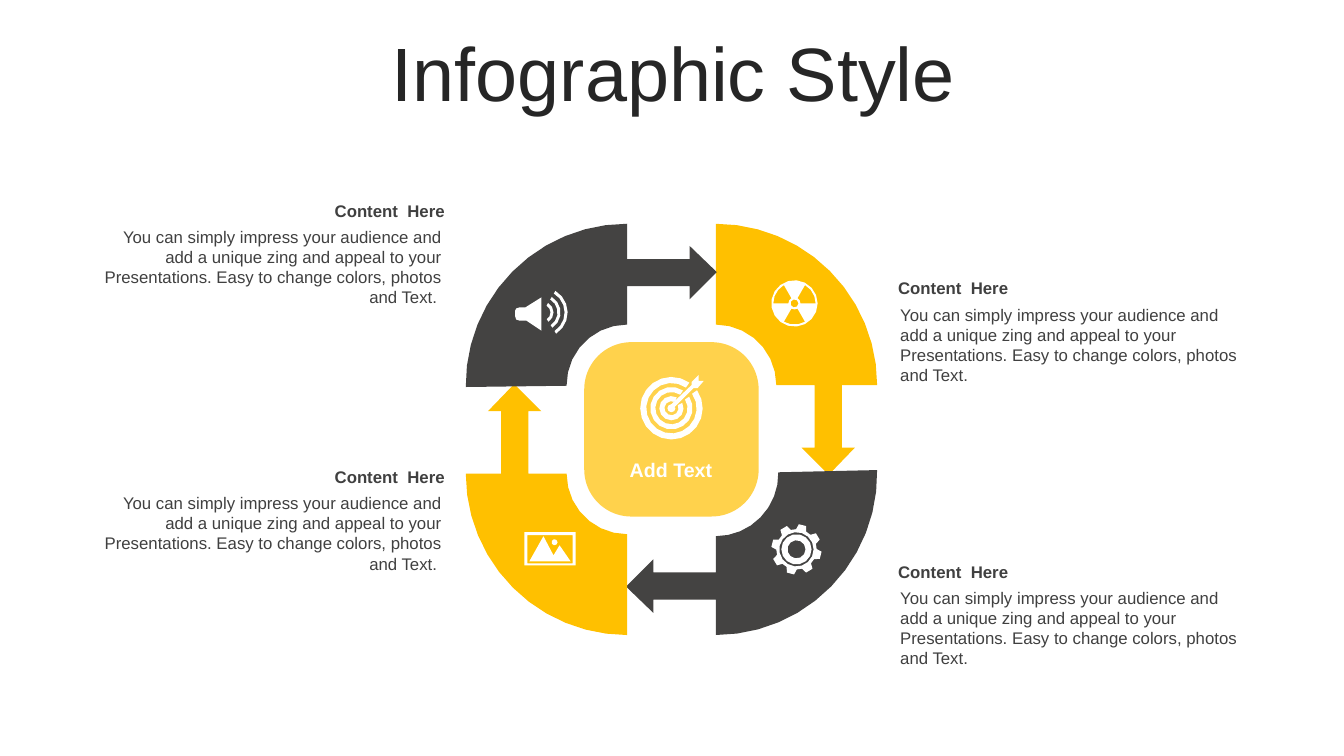
from dataclasses import dataclass
from math import acos, ceil, cos, degrees, radians, sin

from lxml import etree
from pptx import Presentation, util as u
from pptx.dml.color import RGBColor
from pptx.enum import shapes, text
from pptx.oxml import ns

Point = tuple[float, float]
Outline = list[Point]

YELLOW = RGBColor(0xFF, 0xC0, 0x00)
CHARCOAL = RGBColor(0x44, 0x43, 0x42)
TITLE_GRAY = RGBColor(0x26, 0x26, 0x26)
TEXT_GRAY = RGBColor(0x40, 0x40, 0x40)
WHITE = RGBColor(0xFF, 0xFF, 0xFF)
LEFT, CENTER, RIGHT = text.PP_ALIGN.LEFT, text.PP_ALIGN.CENTER, text.PP_ALIGN.RIGHT

CYCLE_CENTER = (6.66, 4.26)
ARC_TOLERANCE = 0.4 / 100
HEADING = "Content  Here"
BODY = (
    "You can simply impress your audience and add a unique zing and appeal to your "
    "Presentations. Easy to change colors, photos and Text."
)


@dataclass
class Quadrant:
    color: RGBColor
    start: int
    side: Point
    tilt: float = 0
    inner: float = 0.6


@dataclass
class Caption:
    left: float
    top: float
    align: text.PP_ALIGN
    body: str


QUADRANTS = [
    Quadrant(YELLOW, 270, (1, -1)),
    Quadrant(CHARCOAL, 0, (1, 1), tilt=-1.3, inner=0.62),
    Quadrant(YELLOW, 90, (-1, 1)),
    Quadrant(CHARCOAL, 180, (-1, -1), tilt=-0.7),
]
CAPTIONS = [
    Caption(8.81, 2.71, LEFT, BODY),
    Caption(8.81, 5.52, LEFT, BODY),
    Caption(0.87, 1.94, RIGHT, BODY + " "),
    Caption(0.87, 4.58, RIGHT, BODY + " "),
]


def polar(center: Point, radius: float, angle: float) -> Point:
    a = radians(angle)
    return center[0] + radius * cos(a), center[1] + radius * sin(a)


def arc(center: Point, radius: float, start: float, end: float) -> Outline:
    widest = 2 * degrees(acos(1 - ARC_TOLERANCE / radius))
    steps = ceil(abs(end - start) / widest)
    return [polar(center, radius, start + (end - start) * i / steps) for i in range(steps + 1)]


def circle(center: Point, radius: float) -> Outline:
    return arc(center, radius, 0, 360)[:-1]


def band(center: Point, outer: float, inner: float, start: float, end: float) -> Outline:
    return arc(center, outer, start, end) + arc(center, inner, end, start)


def rect(left: float, top: float, right: float, bottom: float) -> Outline:
    return [(left, top), (right, top), (right, bottom), (left, bottom)]


def add_outlines(s, outlines: list[Outline], color: RGBColor) -> None:
    builder = None
    for outline in outlines:
        first, *rest = [(u.Inches(x), u.Inches(y)) for x, y in outline]
        if builder is None:
            builder = s.shapes.build_freeform(*first)
        else:
            builder.move_to(*first)
        builder.add_line_segments(rest, close=True)
    paint(builder.convert_to_shape(), color)


def paint(sp, color: RGBColor) -> None:
    sp.shadow.inherit = False
    sp.fill.solid()
    sp.fill.fore_color.rgb = color
    sp.line.fill.background()


def add_text(s, content: str, left: float, top: float, width: float, height: float, *,
             size: float = 12, color: RGBColor = TEXT_GRAY, bold: bool = False,
             align: text.PP_ALIGN = LEFT, anchor: text.MSO_ANCHOR = text.MSO_ANCHOR.TOP,
             line_spacing: float = 1.0, space_before: float = 0) -> None:
    tf = s.shapes.add_textbox(*map(u.Inches, (left, top, width, height))).text_frame
    tf.word_wrap = True
    tf.vertical_anchor = anchor
    p = tf.paragraphs[0]
    p.alignment = align
    p.line_spacing = line_spacing
    p.space_before = u.Pt(space_before)
    r = p.add_run()
    r.text = content
    r.font.name = "Arial"
    r.font.size = u.Pt(size)
    r.font.bold = bold
    r.font.color.rgb = color


def add_quadrant(s, q: Quadrant) -> None:
    center = (CYCLE_CENTER[0] + 0.44 * q.side[0], CYCLE_CENTER[1] + 0.44 * q.side[1])
    end = q.start + 90
    arrow = [(1.25, 0), (1.25, 0.62), (1.38, 0.62), (1.12, 0.89),
             (0.85, 0.62), (0.98, 0.62), (0.98, 0)]
    arrow = [polar(polar(center, out, end), ahead, end + 90) for out, ahead in arrow]
    outer = arc(center, 1.6, q.start + q.tilt, end)
    inner = arc(center, q.inner, end, q.start + q.tilt)
    add_outlines(s, [outer + arrow + inner], q.color)


def add_hub(s) -> None:
    side = 1.73
    sp = s.shapes.add_shape(
        shapes.MSO_SHAPE.ROUNDED_RECTANGLE,
        *(u.Inches(c - side / 2) for c in CYCLE_CENTER), u.Inches(side), u.Inches(side))
    sp.adjustments[0] = 0.27
    paint(sp, YELLOW)
    rgb = sp.element.spPr.find(".//" + ns.qn("a:srgbClr"))
    etree.SubElement(rgb, ns.qn("a:alpha"), val="70000")


def speaker() -> list[Outline]:
    body = [(5.37, 2.95), (5.37, 3.28), (5.22, 3.18), (5.15, 3.18), (5.12, 3.17),
            (5.11, 3.14), (5.11, 3.08), (5.12, 3.06), (5.15, 3.05), (5.21, 3.05)]
    return [body] + [band((5.38, 3.1), r, r - 0.03, -59, 57) for r in (0.11, 0.18, 0.25)]


def radiation() -> list[Outline]:
    c = (7.88, 3.01)
    blades = [band(c, 0.21, 0.06, a, a + 60) for a in (60, 180, 300)]
    return [circle(c, 0.23), circle(c, 0.04)] + blades


def landscape() -> list[Outline]:
    mountains = [(5.39, 5.32), (5.49, 5.51), (5.55, 5.41), (5.66, 5.57), (5.25, 5.57)]
    return [rect(5.2, 5.28, 5.71, 5.61), rect(5.23, 5.31, 5.68, 5.59),
            mountains, circle((5.5, 5.38), 0.03)]


def target() -> list[Outline]:
    c = (6.66, 4.05)
    rings = [(0.31, 0.25, 10), (0.21, 0.16, 12), (0.12, 0.07, 19)]
    dart = [(6.86, 3.82), (6.86, 3.79), (6.93, 3.72), (6.93, 3.78), (6.98, 3.78),
            (6.92, 3.85), (6.88, 3.85), (6.69, 4.04)] + arc(c, 0.04, 0, 270)
    return [band(c, outer, inner, gap - 45, 315 - gap) for outer, inner, gap in rings] + [dart]


def gear() -> list[Outline]:
    c = (7.9, 5.45)
    tooth = [(0.2, -15), (0.25, -8.5), (0.25, 8.5), (0.2, 15)]
    rim = [polar(c, r, 45 * i - 76 + a) for i in range(8) for r, a in tooth]
    return [rim] + [circle(c, r) for r in (0.17, 0.15, 0.09)]


def main() -> None:
    prs = Presentation()
    prs.slide_width, prs.slide_height = u.Inches(13.33), u.Inches(7.5)
    s = prs.slides.add_slide(prs.slide_layouts[6])
    add_text(s, "Infographic Style", 0.35, 0.37, 12.66, 0.79, size=54, color=TITLE_GRAY,
             align=CENTER, anchor=text.MSO_ANCHOR.MIDDLE, line_spacing=0.9, space_before=10)
    for q in QUADRANTS:
        add_quadrant(s, q)
    add_hub(s)
    add_text(s, "Add Text", 6.05, 4.49, 1.21, 0.34, size=14, color=WHITE, bold=True, align=CENTER)
    for c in CAPTIONS:
        add_text(s, c.body, c.left + 0.02, c.top + 0.26, 3.59, 0.91, align=c.align)
        add_text(s, HEADING, c.left, c.top, 3.64, 0.3, bold=True, align=c.align)
    for icon in (speaker, radiation, landscape, target, gear):
        add_outlines(s, icon(), WHITE)
    prs.save("out.pptx")


if __name__ == "__main__":
    main()
